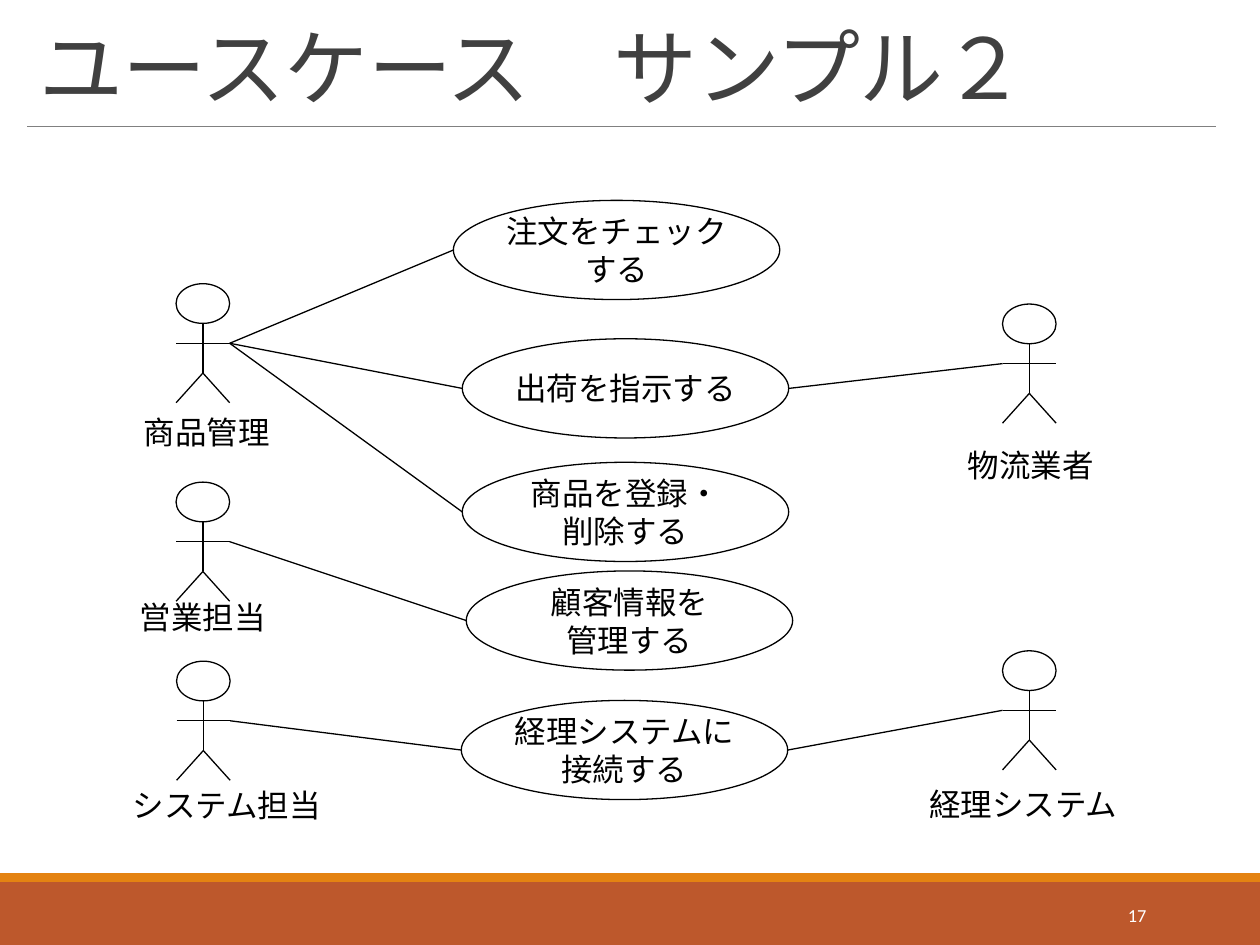
from dataclasses import dataclass

from lxml import etree
from pptx import Presentation
from pptx import util as u
from pptx.dml.color import RGBColor
from pptx.enum import shapes, text
from pptx.oxml.ns import qn

Cm, Kind = u.Cm, shapes.MSO_SHAPE
Align, Anchor = text.PP_ALIGN, text.MSO_ANCHOR


@dataclass(frozen=True)
class Theme:
    font: str = "Calibri"
    ink: str = "000000"
    title: str = "404040"
    rule: str = "808080"
    band: str = "BD582C"
    trim: str = "E48312"
    light: str = "FFFFFF"
    big: float = 48
    body: float = 18
    small: float = 10.5
    thin: float = 0.75
    hair: float = 0.5


T = Theme()
FIG_W, FIG_H = 1.08, 2.4    # actor, in cm
CASE_W, CASE_H = 6.58, 2    # use case oval, in cm

# name: (left, top, label text, label centre, label top)
ACTORS = {
    "goods": (3.55, 5.72, "商品管理", 4.17, 8.2),
    "sales": (3.55, 9.72, "営業担当", 4.09, 11.94),
    "admin": (3.56, 13.33, "システム担当", 4.57, 15.72),
    "cargo": (20.21, 6.13, "物流業者", 20.78, 8.86),
    "books": (20.21, 13.12, "経理システム", 20.63, 15.7),
}
# name: (left, top, text)
CASES = {
    "check": (9.14, 4.04, "注文をチェック\nする"),
    "ship": (9.32, 6.83, "出荷を指示する"),
    "stock": (9.32, 9.32, "商品を登録・\n削除する"),
    "client": (9.4, 11.51, "顧客情報を\n管理する"),
    "link": (9.3, 14.12, "経理システムに\n接続する"),
}
LEFT_LINKS = [("goods", "check"), ("goods", "ship"), ("goods", "stock"),
              ("sales", "client"), ("admin", "link")]
RIGHT_LINKS = [("cargo", "ship"), ("books", "link")]


def style(frame, words, size, color, align, anchor, wrap=True):
    frame.text = words
    frame.word_wrap = wrap
    frame.auto_size = text.MSO_AUTO_SIZE.NONE
    frame.vertical_anchor = anchor
    for para in frame.paragraphs:
        para.alignment = align
        for run in para.runs:
            run.font.name = T.font
            run.font.size = u.Pt(size)
            run.font.color.rgb = RGBColor.from_string(color)


def line(parts, x1, y1, x2, y2, color=T.ink, width=T.thin):
    item = parts.add_connector(shapes.MSO_CONNECTOR.STRAIGHT,
                               Cm(x1), Cm(y1), Cm(x2), Cm(y2))
    item.line.color.rgb = RGBColor.from_string(color)
    item.line.width = u.Pt(width)
    etree.SubElement(item._element.spPr, qn("a:effectLst"))


def shape(parts, kind, x, y, w, h, fill=None):
    """Filled shape without a line, or a hollow one with a thin line."""
    item = parts.add_shape(kind, Cm(x), Cm(y), Cm(w), Cm(h))
    item.shadow.inherit = False
    if fill:
        item.fill.solid()
        item.fill.fore_color.rgb = RGBColor.from_string(fill)
        item.line.fill.background()
    else:
        item.fill.background()
        item.line.color.rgb = RGBColor.from_string(T.ink)
        item.line.width = u.Pt(T.thin)
    return item


def label(parts, words, x, y, w, h, size, color, align, anchor):
    box = parts.add_textbox(Cm(x), Cm(y), Cm(w), Cm(h))
    style(box.text_frame, words, size, color, align, anchor)


def header(slide, x, y, w, h):
    title = slide.shapes.title
    title.left, title.top, title.width, title.height = map(Cm, (x, y, w, h))
    style(title.text_frame, "ユースケース　サンプル２", T.big, T.title,
          Align.LEFT, Anchor.BOTTOM)
    para = title.text_frame.paragraphs[0]
    para.line_spacing = 0.85
    para.runs[0].font._element.set("spc", "-50")
    line(slide.shapes, x, y + h + 0.08, x + w, y + h + 0.08, T.rule, T.hair)


def footer(slide, x, y, w, h):
    trim = 0.18
    shape(slide.shapes, Kind.RECTANGLE, x, y + trim, w, h - trim, T.band)
    shape(slide.shapes, Kind.RECTANGLE, x, y, w, trim, T.trim)
    label(slide.shapes, "17", x + w - 4.78, y + 0.33, 2.74, 1.02,
          T.small, T.light, Align.RIGHT, Anchor.MIDDLE)


def actor(slide, x, y, w, h, words, mid, top):
    """Stick figure in the given box, with its name below."""
    parts = slide.shapes.add_group_shape().shapes
    neck, arms, hips = (y + h * part for part in (1 / 3, 1 / 2, 3 / 4))
    shape(parts, Kind.OVAL, x, y, w, neck - y)
    line(parts, x + w / 2, neck, x + w / 2, hips)
    for foot in (x, x + w):
        line(parts, x + w / 2, hips, foot, y + h)
    line(parts, x, arms, x + w, arms)
    wide = 5.64
    label(slide.shapes, words, mid - wide / 2, top, wide, 1.02,
          T.body, T.ink, Align.CENTER, Anchor.TOP)


def case(slide, x, y, w, h, words):
    oval = shape(slide.shapes, Kind.OVAL, x, y, w, h)
    style(oval.text_frame, words, T.body, T.ink,
          Align.CENTER, Anchor.MIDDLE, wrap=False)


def links(slide):
    """Join the near hand of an actor to the near side of a use case."""
    for pairs, hand, side in ((LEFT_LINKS, FIG_W, 0),
                              (RIGHT_LINKS, 0, CASE_W)):
        for who, what in pairs:
            ax, ay = ACTORS[who][:2]
            cx, cy = CASES[what][:2]
            line(slide.shapes, ax + hand, ay + FIG_H / 2,
                 cx + side, cy + CASE_H / 2)


def main():
    deck = Presentation()
    deck.slide_width, deck.slide_height = Cm(25.4), Cm(19.05)
    slide = deck.slides.add_slide(deck.slide_layouts[5])

    # Frame of the slide
    footer(slide, 0, 17.6, 25.4, 1.45)
    header(slide, 0.55, 0.23, 23.96, 2.24)

    # Use case diagram
    for x, y, *name in ACTORS.values():
        actor(slide, x, y, FIG_W, FIG_H, *name)
    for x, y, words in CASES.values():
        case(slide, x, y, CASE_W, CASE_H, words)
    links(slide)
    deck.save("out.pptx")


if __name__ == "__main__":
    main()
